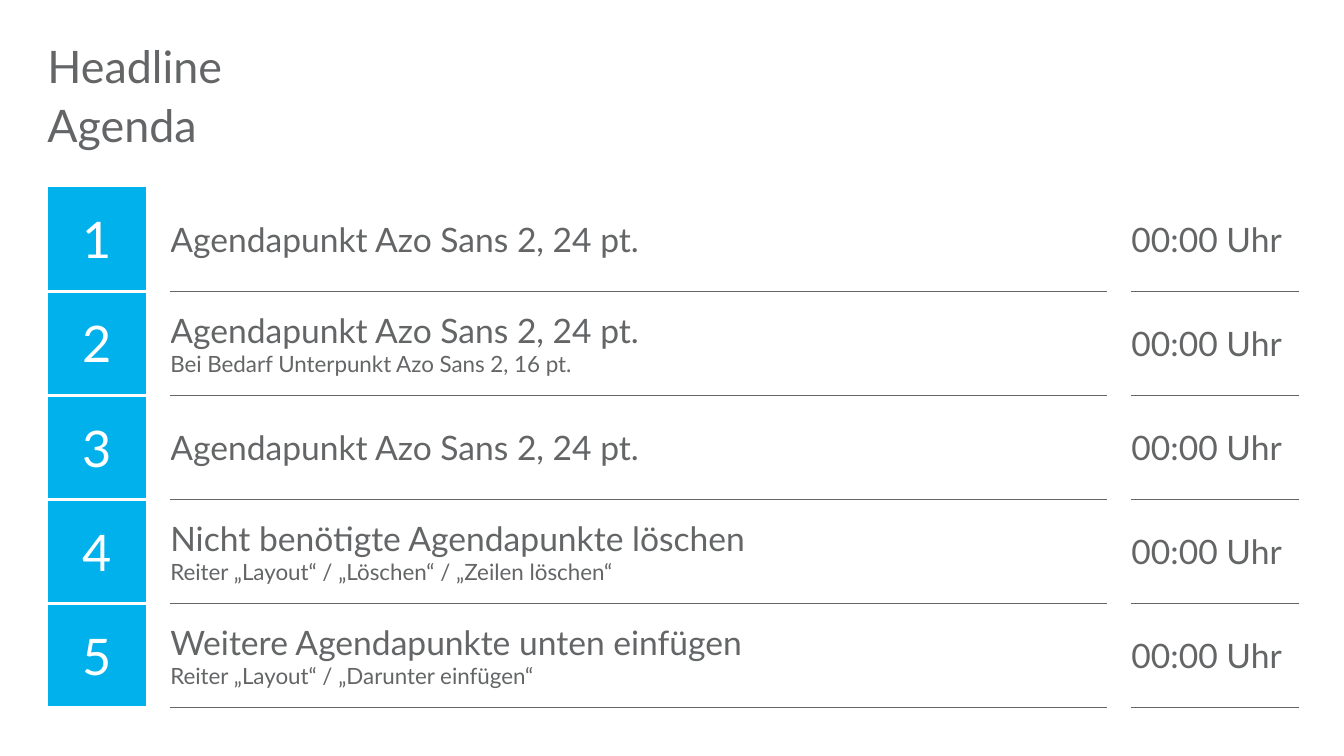
from dataclasses import dataclass

from lxml.etree import SubElement
from pptx import Presentation
from pptx.dml.color import RGBColor
from pptx.enum.text import MSO_ANCHOR as Anchor, MSO_AUTO_SIZE as AutoSize, PP_ALIGN as Align
from pptx.oxml.ns import qn
from pptx.util import Pt

HEADLINE = "Headline"
SUBTITLE = "Agenda"
AGENDA = [
    (["Agendapunkt Azo Sans 2, 24 pt."], "00:00 Uhr"),
    (["Agendapunkt Azo Sans 2, 24 pt.", "Bei Bedarf Unterpunkt Azo Sans 2, 16 pt."], "00:00 Uhr"),
    (["Agendapunkt Azo Sans 2, 24 pt."], "00:00 Uhr"),
    (["Nicht benötigte Agendapunkte löschen", "Reiter „Layout“ / „Löschen“ / „Zeilen löschen“"], "00:00 Uhr"),
    (["Weitere Agendapunkte unten einfügen", "Reiter „Layout“ / „Darunter einfügen“"], "00:00 Uhr"),
]


@dataclass(frozen=True)
class Theme:
    font: str = "Lato"
    text: str = "636566"
    accent: str = "00B1EB"
    white: str = "FFFFFF"
    heading: int = 32
    number: int = 36
    item: int = 24
    detail: int = 16


THEME = Theme()
LEFT, WIDTH = 33.84, 892.1
HEADING_TOP, SUBTITLE_TOP, HEADING_HEIGHT = 31.7, 69.8, 36.7
TABLE_TOP, ROW_HEIGHT = 133.9, 74.3
COLUMN_WIDTHS = [70.6, 16.6, 669.3, 16.6, 119]
NUMBER, ITEM, TIME = 0, 2, 4
THIN, RULE, GAP = 1, 0.75, 3


def format_paragraph(paragraph, size, color=THEME.text, align=Align.LEFT):
    paragraph.alignment = align
    paragraph.font.name = THEME.font
    paragraph.font.size = Pt(size)
    paragraph.font.color.rgb = RGBColor.from_string(color)


def fill_heading(shape, text, top, line_spacing):
    shape.left, shape.top = Pt(LEFT), Pt(top)
    shape.width, shape.height = Pt(WIDTH), Pt(HEADING_HEIGHT)
    frame = shape.text_frame
    frame.margin_left = frame.margin_top = frame.margin_right = frame.margin_bottom = 0
    frame.word_wrap = True
    frame.auto_size = AutoSize.NONE
    frame.vertical_anchor = Anchor.TOP
    frame.text = text
    paragraph = frame.paragraphs[0]
    paragraph.line_spacing = line_spacing
    format_paragraph(paragraph, THEME.heading)


def add_border(cell, side, color, width):
    line = SubElement(cell._tc.get_or_add_tcPr(), qn(f"a:ln{side}"), w=str(Pt(width)))
    solid = SubElement(line, qn("a:solidFill"))
    SubElement(solid, qn("a:srgbClr"), val=color)


def style_cell(cell, row, column):
    fill = THEME.accent if column == NUMBER else THEME.white
    if column == NUMBER:
        divider = THEME.white, GAP
    elif column in (ITEM, TIME):
        divider = THEME.text, RULE
    else:
        divider = THEME.white, THIN
    add_border(cell, "L", THEME.white, THIN)
    add_border(cell, "R", THEME.white, THIN)
    add_border(cell, "T", *(divider if row else (fill, THIN)))
    add_border(cell, "B", *divider)
    cell.fill.solid()
    cell.fill.fore_color.rgb = RGBColor.from_string(fill)
    cell.vertical_anchor = Anchor.MIDDLE
    if column in (ITEM, TIME):
        cell.margin_left = 0
    if column == TIME:
        cell.margin_right = 0


def add_agenda(slide):
    frame = slide.shapes.add_table(
        len(AGENDA), len(COLUMN_WIDTHS), Pt(LEFT), Pt(TABLE_TOP), Pt(WIDTH), Pt(ROW_HEIGHT * len(AGENDA)))
    table = frame.table
    table.first_row = table.horz_banding = False
    for column, width in zip(table.columns, COLUMN_WIDTHS):
        column.width = Pt(width)
    for row, (lines, time) in enumerate(AGENDA):
        table.rows[row].height = Pt(ROW_HEIGHT)
        for column in range(len(COLUMN_WIDTHS)):
            style_cell(table.cell(row, column), row, column)
        number, item, clock = (table.cell(row, column) for column in (NUMBER, ITEM, TIME))
        number.text = str(row + 1)
        format_paragraph(number.text_frame.paragraphs[0], THEME.number, THEME.white, Align.CENTER)
        item.text = "\n".join(lines)
        for paragraph, size in zip(item.text_frame.paragraphs, (THEME.item, THEME.detail)):
            format_paragraph(paragraph, size)
        clock.text = time
        format_paragraph(clock.text_frame.paragraphs[0], THEME.item)


def main():
    presentation = Presentation()
    presentation.slide_width, presentation.slide_height = Pt(960), Pt(540)
    slide = presentation.slides.add_slide(presentation.slide_layouts[5])
    fill_heading(slide.shapes.title, HEADLINE, HEADING_TOP, 0.9)
    subtitle = slide.shapes.add_textbox(Pt(LEFT), Pt(SUBTITLE_TOP), Pt(WIDTH), Pt(HEADING_HEIGHT))
    fill_heading(subtitle, SUBTITLE, SUBTITLE_TOP, 1.0)
    add_agenda(slide)
    presentation.save("out.pptx")


if __name__ == "__main__":
    main()
